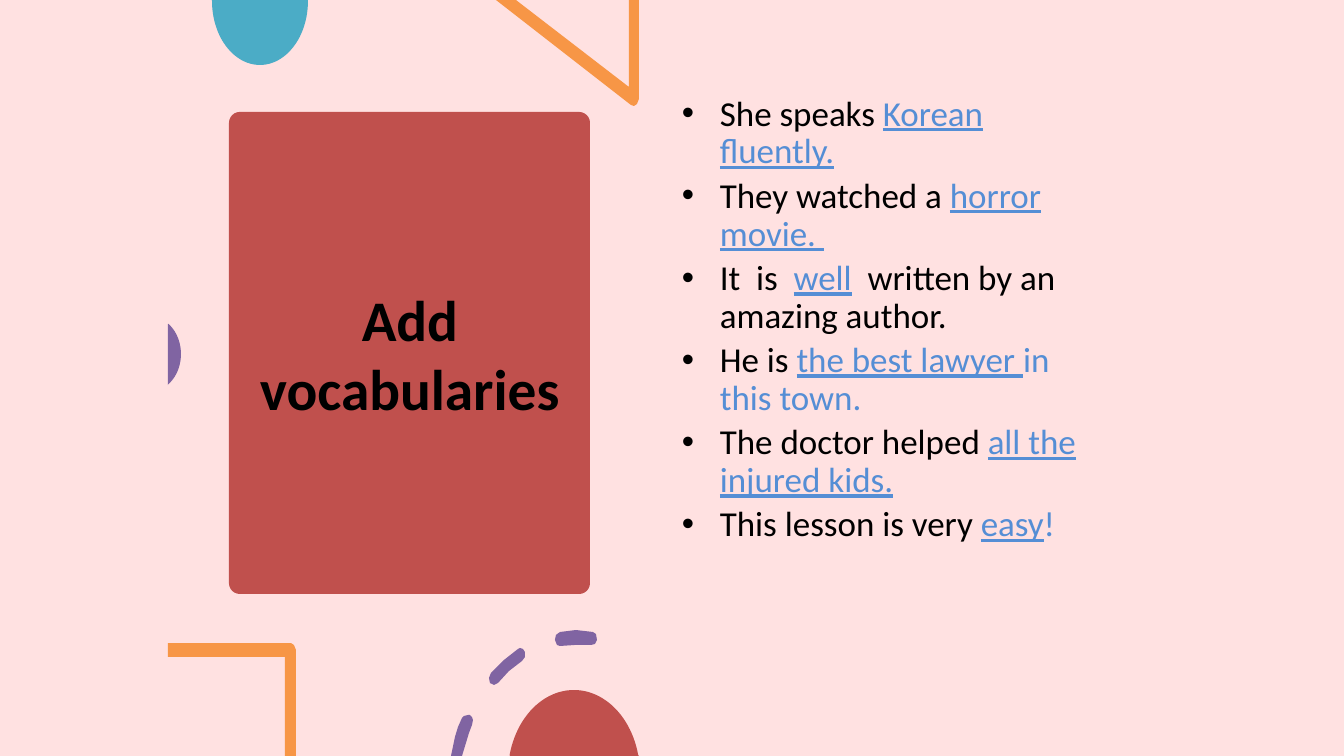
from math import cos, radians, sin

from lxml.etree import SubElement
from pptx import Presentation
from pptx.dml.color import RGBColor as RGB
from pptx.enum.shapes import MSO_SHAPE as SHAPE
from pptx.enum.text import MSO_ANCHOR as ANCHOR, PP_ALIGN as ALIGN
from pptx.oxml import parse_xml
from pptx.oxml.ns import nsdecls, qn
from pptx.util import Pt

W, H = 1344, 756
PX = 12192000 / W
FONT = "Calibri"
COLORS = {
    "background": "FFE1E1",
    "red": "C0504D",
    "teal": "4BACC6",
    "orange": "F79646",
    "purple": "8064A2",
    "black": "000000",
    "blue": "558ED5",
    "white": "FFFFFF",
}


def emu(*lengths):
    return [round(n * PX) for n in lengths]


def arc(cx, cy, rx, ry, start, end):
    angles = [radians(start + (end - start) * i / 48) for i in range(49)]
    return [(cx + rx * cos(a), cy + ry * sin(a)) for a in angles]


prs = Presentation()
prs.slide_width, prs.slide_height = emu(W, H)
s = prs.slides.add_slide(prs.slide_layouts[6])
s.background.fill.solid()
s.background.fill.fore_color.rgb = RGB.from_string(COLORS["background"])

card = s.shapes.add_shape(SHAPE.ROUNDED_RECTANGLE, *emu(229, 112, 361, 482))
card.adjustments[0] = 0.03
card.shadow.inherit = False
card.fill.solid()
card.fill.fore_color.rgb = RGB.from_string(COLORS["red"])
card.line.fill.background()

teal_oval = arc(260, 1, 48, 64, 0, 180) + [(212, 0), (308, 0)]
triangle = [(639, 0), (629, 0), (629, 87), (516, 0), (496, 0),
            (631, 105), (634, 106), (637, 104), (639, 99)]
purple_oval = arc(151, 354, 30, 37, -55, 55) + [(168, 385), (168, 324)]
corner = [(291, 643), (168, 643), (168, 657), (285, 657), (285, 756),
          (296, 756), (296, 650), (294, 645)]
dashes = [
    [(468, 715), (464, 716), (462, 718), (458, 727), (455, 737), (451, 756), (462, 756),
     (466, 743), (469, 733), (472, 725), (473, 720), (472, 717), (470, 715)],
    [(520, 648), (518, 649), (504, 660), (491, 673), (489, 678), (490, 683), (494, 685),
     (498, 683), (509, 671), (522, 661), (525, 657), (525, 652), (523, 649)],
    [(576, 630), (560, 632), (556, 635), (555, 640), (557, 645), (560, 646), (575, 645),
     (591, 645), (595, 644), (597, 640), (596, 634), (593, 632)],
]
red_oval = arc(574, 774, 66, 84, 193, 347) + [(639, 756), (510, 756)]

decorations = [
    ("teal", [teal_oval]),
    ("orange", [triangle]),
    ("purple", [purple_oval]),
    ("orange", [corner]),
    ("purple", dashes),
    ("red", [red_oval]),
]
for color, outlines in decorations:
    first, *others = [[emu(*point) for point in outline] for outline in outlines]
    builder = s.shapes.build_freeform(*first[0])
    builder.add_line_segments(first[1:])
    for outline in others:
        builder.move_to(*outline[0])
        builder.add_line_segments(outline[1:])
    sp = builder.convert_to_shape()
    sp.shadow.inherit = False
    sp.fill.solid()
    sp.fill.fore_color.rgb = RGB.from_string(COLORS[color])
    sp.line.fill.background()

title = s.shapes.add_textbox(*emu(247, 123, 326, 460))
tf = title.text_frame
tf.word_wrap = True
tf.vertical_anchor = ANCHOR.MIDDLE
p = tf.paragraphs[0]
p.alignment = ALIGN.CENTER
r = p.add_run()
r.text = "Add vocabularies"
r.font.name, r.font.size, r.font.bold = FONT, Pt(41), True
r.font.color.rgb = RGB.from_string(COLORS["black"])
r.font._element.insert(0, parse_xml(
    f'<a:ln {nsdecls("a")} w="9525"><a:solidFill>'
    f'<a:srgbClr val="{COLORS["white"]}"/></a:solidFill></a:ln>'))

sentences = [
    [("She speaks ", "black", False), ("Korean fluently.", "blue", True)],
    [("They watched a ", "black", False), ("horror movie. ", "blue", True)],
    [("It  is  ", "black", False), ("well", "blue", True),
     ("  written by an amazing author.", "black", False)],
    [("He is ", "black", False), ("the best lawyer ", "blue", True),
     ("in this town.", "blue", False)],
    [("The doctor helped ", "black", False), ("all the injured kids.", "blue", True)],
    [("This lesson is very ", "black", False), ("easy", "blue", True), ("!", "blue", False)],
]
body = s.shapes.add_textbox(*emu(672, 91, 434, 539))
tf = body.text_frame
tf.word_wrap = True
indent, = emu(38)
for i, sentence in enumerate(sentences):
    p = tf.add_paragraph() if i else tf.paragraphs[0]
    p.line_spacing = 0.9
    p.space_before = Pt(4.7)
    pPr = p._p.get_or_add_pPr()
    pPr.set("marL", str(indent))
    pPr.set("indent", str(-indent))
    SubElement(pPr, qn("a:buFont"), typeface="Arial")
    SubElement(pPr, qn("a:buChar"), char="•")
    for text, color, underline in sentence:
        r = p.add_run()
        r.text = text
        r.font.name, r.font.size, r.font.underline = FONT, Pt(25), underline
        r.font.color.rgb = RGB.from_string(COLORS[color])

prs.save("out.pptx")
